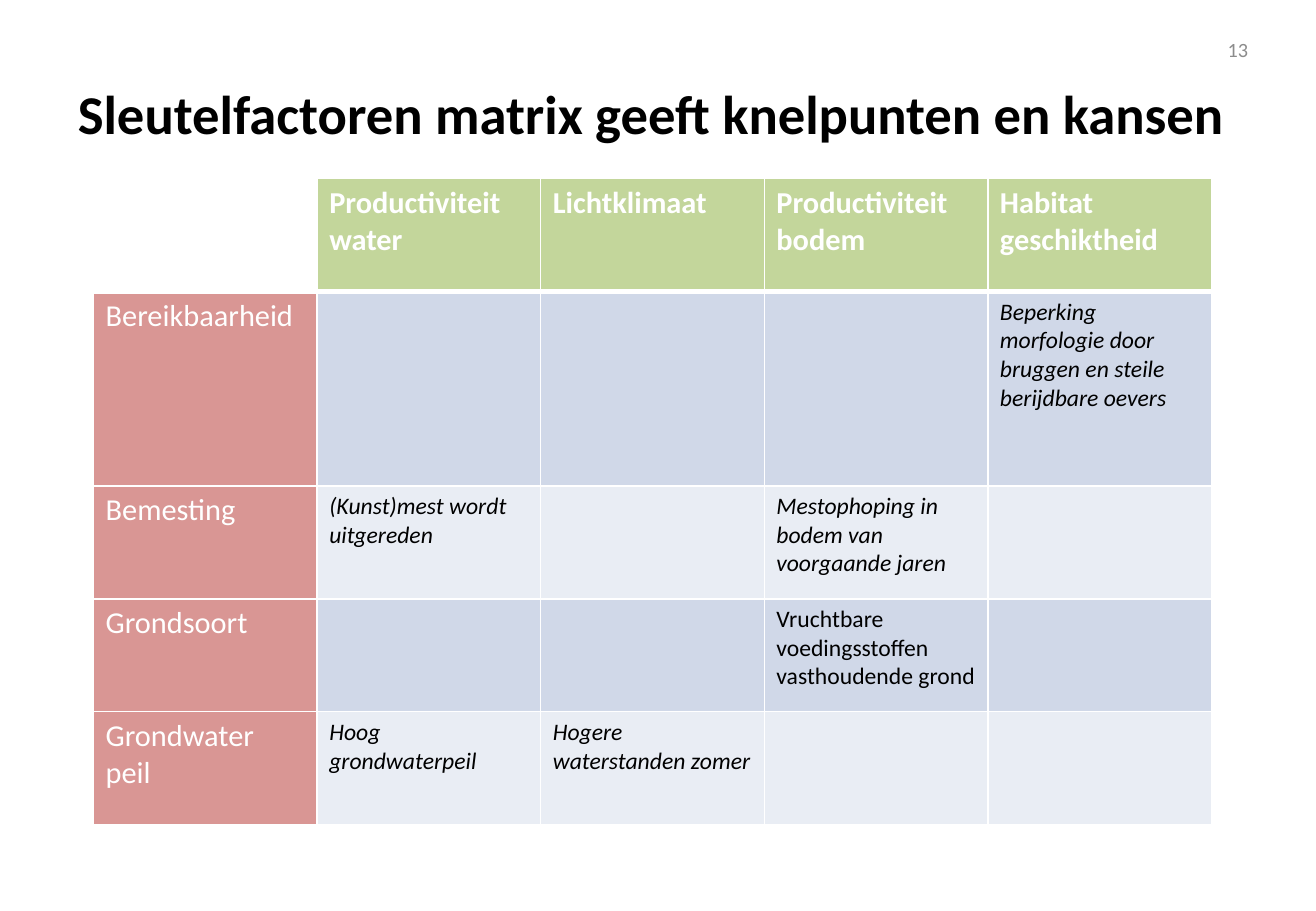
"""Build the key factor matrix slide with its title, table and page number."""
from dataclasses import dataclass

from lxml.etree import SubElement
from pptx import Presentation
from pptx.dml.color import RGBColor
from pptx.enum.text import MSO_ANCHOR, PP_ALIGN
from pptx.oxml.ns import qn
from pptx.util import Inches, Pt

TITLE = "Sleutelfactoren matrix geeft knelpunten en kansen"
PAGE_NUMBER = "13"
MATRIX = [
    ["", "Productiviteit water", "Lichtklimaat", "Productiviteit bodem", "Habitat geschiktheid"],
    ["Bereikbaarheid", "", "", "", "Beperking morfologie door bruggen en steile berijdbare oevers"],
    ["Bemesting", "(Kunst)mest wordt uitgereden", "", "Mestophoping in bodem van voorgaande jaren", ""],
    ["Grondsoort", "", "", "Vruchtbare voedingsstoffen vasthoudende grond", ""],
    ["Grondwater peil", "Hoog grondwaterpeil", "Hogere waterstanden zomer", "", ""],
]
UPRIGHT_ROW = 3
ROW_HEIGHTS = [0.93, 1.6, 0.93, 0.93, 0.93]
COLUMN_WIDTH = 1.84


@dataclass(frozen=True)
class Theme:
    """Colours, font and type sizes of the slide."""

    font: str = "Calibri"
    black: str = "000000"
    white: str = "FFFFFF"
    grey: str = "8C8C8C"
    header: str = "C3D69B"
    label: str = "D99694"
    bands: tuple = ("E9EDF4", "D0D8E8")
    title_size: float = 32.4
    label_size: float = 18
    note_size: float = 14
    number_size: float = 12
    thin_line: float = 1
    thick_line: float = 3


THEME = Theme()


def write_text(frame, text, size, color=THEME.black, bold=False, italic=False,
               align=PP_ALIGN.LEFT, anchor=MSO_ANCHOR.TOP):
    """Put formatted text into a text frame."""
    frame.word_wrap = True
    frame.vertical_anchor = anchor
    paragraph = frame.paragraphs[0]
    paragraph.alignment = align
    run = paragraph.add_run()
    run.text = text
    run.font.name = THEME.font
    run.font.size = Pt(size)
    run.font.bold = bold
    run.font.italic = italic
    run.font.color.rgb = RGBColor.from_string(color)


def style_cell(cell, fill, top, bottom):
    """Give a cell white borders and a solid fill."""
    properties = cell._tc.get_or_add_tcPr()
    widths = {"L": THEME.thin_line, "R": THEME.thin_line, "T": top, "B": bottom}
    for side, width in widths.items():
        line = SubElement(properties, qn(f"a:ln{side}"), w=str(Pt(width)))
        SubElement(SubElement(line, qn("a:solidFill")), qn("a:srgbClr"), val=THEME.white)
    cell.fill.solid()
    cell.fill.fore_color.rgb = RGBColor.from_string(fill)


def cell_format(row, column):
    """Return the fill and the text format for a place in the matrix."""
    if row == 0:
        fill = THEME.header if column else THEME.white
        return fill, dict(size=THEME.label_size, color=THEME.white, bold=True)
    if column == 0:
        return THEME.label, dict(size=THEME.label_size, color=THEME.white)
    return THEME.bands[row % 2], dict(size=THEME.note_size, italic=row != UPRIGHT_ROW)


def add_matrix(slide):
    """Add the table of key factors."""
    column_count = len(MATRIX[0])
    table = slide.shapes.add_table(
        len(MATRIX), column_count, Inches(0.77), Inches(1.47),
        Inches(COLUMN_WIDTH * column_count), Inches(sum(ROW_HEIGHTS))).table
    for column in table.columns:
        column.width = Inches(COLUMN_WIDTH)
    for row, (height, texts) in enumerate(zip(ROW_HEIGHTS, MATRIX)):
        table.rows[row].height = Inches(height)
        top = THEME.thick_line if row == 1 else THEME.thin_line
        bottom = THEME.thick_line if row == 0 else THEME.thin_line
        for column, text in enumerate(texts):
            cell = table.cell(row, column)
            fill, text_format = cell_format(row, column)
            style_cell(cell, fill, top, bottom)
            if text:
                write_text(cell.text_frame, text, **text_format)


def main():
    """Build and save the presentation."""
    presentation = Presentation()
    presentation.slide_width, presentation.slide_height = Inches(10.83), Inches(7.5)
    slide = presentation.slides.add_slide(presentation.slide_layouts[5])
    title = slide.shapes.title
    title.left, title.top, title.width, title.height = map(Inches, (0.54, 0.3, 9.75, 1.25))
    write_text(title.text_frame, TITLE, THEME.title_size, bold=True, anchor=MSO_ANCHOR.MIDDLE)
    add_matrix(slide)
    number = slide.shapes.add_textbox(*map(Inches, (7.84, 0.21, 2.53, 0.4)))
    write_text(number.text_frame, PAGE_NUMBER, THEME.number_size, color=THEME.grey,
               align=PP_ALIGN.RIGHT, anchor=MSO_ANCHOR.MIDDLE)
    presentation.save("out.pptx")


if __name__ == "__main__":
    main()
